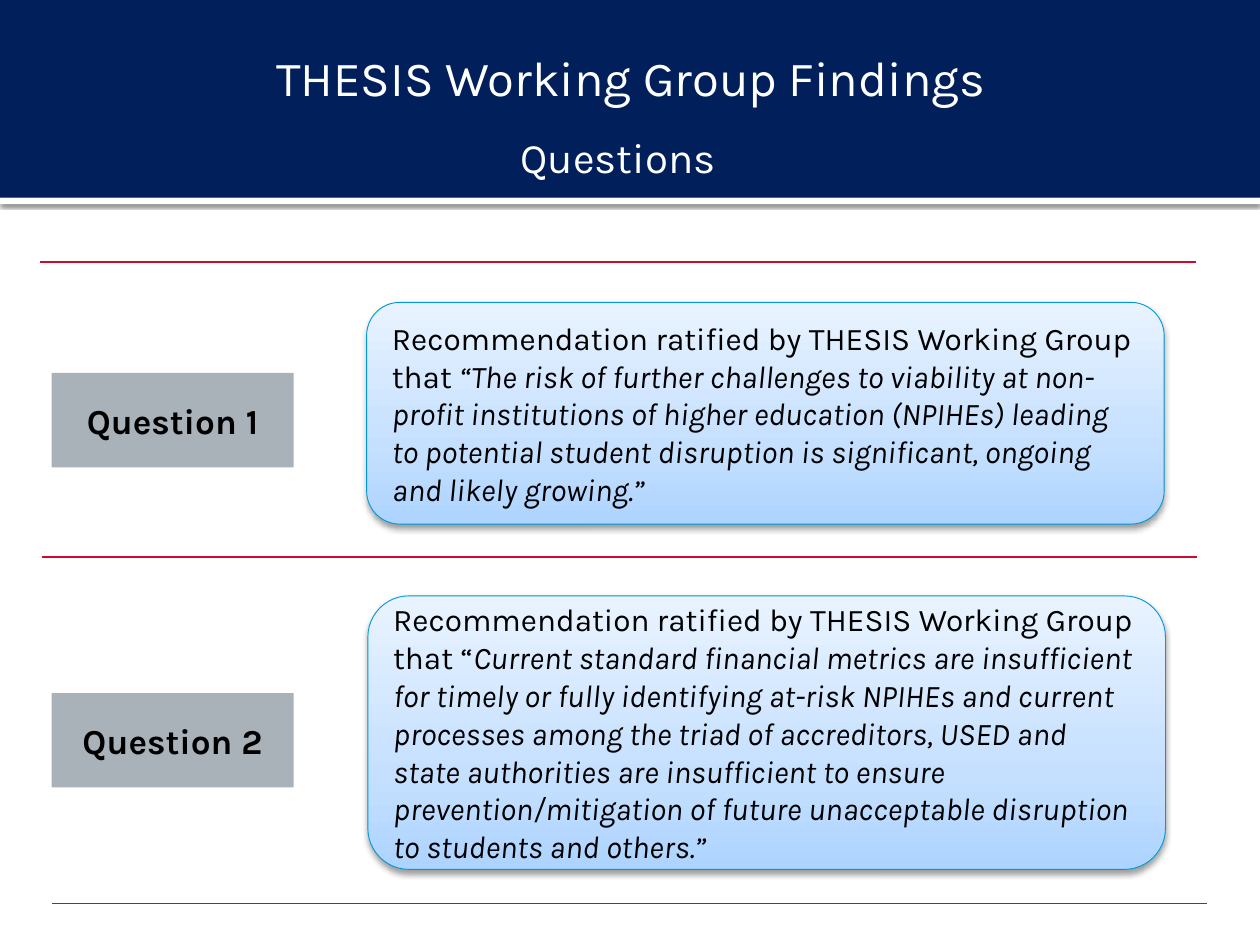
from copy import deepcopy

from lxml import etree
from pptx import Presentation
from pptx.dml.color import RGBColor
from pptx.enum import shapes, text
from pptx.oxml.ns import qn
from pptx.util import Inches, Pt

FONT = "Karla"
WHITE = RGBColor(0xFF, 0xFF, 0xFF)
BLACK = RGBColor(0x00, 0x00, 0x00)
NAVY = RGBColor(0x00, 0x1F, 0x5B)
GREY = RGBColor(0xA9, 0xB1, 0xB9)
RED = RGBColor(0xCF, 0x0A, 0x2C)
CARD_EDGE = RGBColor(0x00, 0x98, 0xD9)
CARD_STOPS = [
    (0, RGBColor(0xAD, 0xD4, 0xFF)),
    (0.35, RGBColor(0xC5, 0xE0, 0xFF)),
    (1, RGBColor(0xE9, 0xF3, 0xFF)),
]
CORNER = 0.15  # card corner radius as a share of the card height
LEAD = "Recommendation ratified by THESIS Working Group that "

# label top, card left, top and height, label, lead-in, quotation
QUESTIONS = [
    (2.96, 2.91, 2.4, 1.76, "Question 1", LEAD,
     "“The risk of further challenges to viability at non-profit institutions "
     "of higher education (NPIHEs) leading to potential student disruption is "
     "significant, ongoing and likely growing.”"),
    (5.5, 2.92, 4.73, 2.17, "Question 2", LEAD + "“",
     "Current standard financial metrics are insufficient for timely or fully "
     "identifying at-risk NPIHEs and current processes among the triad of "
     "accreditors, USED and state authorities are insufficient to ensure "
     "prevention/mitigation of future unacceptable disruption to students "
     "and others.”"),
]
RULES = [(0.32, 2.08), (0.33, 4.42), (0.41, 7.17)]  # left, top
RULE_WIDTH = 9.17


def set_font(paragraph, size, color, bold=False):
    font = paragraph.font
    font.name, font.size, font.bold = FONT, Pt(size), bold
    font.color.rgb = color


def add_block(slide, kind, left, top, width, height, color=None):
    block = slide.shapes.add_shape(
        kind, Inches(left), Inches(top), Inches(width), Inches(height))
    block.shadow.inherit = False
    block.line.fill.background()
    if color is not None:
        block.fill.solid()
        block.fill.fore_color.rgb = color
    return block


def add_drop_shadow(block, opacity, blur, distance):
    effects = block._element.spPr.find(qn("a:effectLst"))
    shadow = etree.SubElement(
        effects, qn("a:outerShdw"), blurRad=str(Pt(blur)), dist=str(Pt(distance)),
        dir="5400000", algn="t", rotWithShape="0")
    color = etree.SubElement(shadow, qn("a:srgbClr"), val="000000")
    etree.SubElement(color, qn("a:alpha"), val=str(opacity * 1000))


def add_heading(slide, words, left, top, width, height, size):
    heading = slide.shapes.add_textbox(
        Inches(left), Inches(top), Inches(width), Inches(height))
    frame = heading.text_frame
    frame.word_wrap = True
    frame.vertical_anchor = text.MSO_ANCHOR.MIDDLE
    paragraph = frame.paragraphs[0]
    paragraph.text = words
    paragraph.alignment = text.PP_ALIGN.CENTER
    set_font(paragraph, size, WHITE)


def add_header(slide, width, height):
    rectangle = shapes.MSO_SHAPE.RECTANGLE
    strip = add_block(slide, rectangle, 0, height, width, 0.05, WHITE)
    add_drop_shadow(strip, 60, 2.5, 0.8)
    add_block(slide, rectangle, 0, 0, width, height, NAVY)
    add_heading(slide, "THESIS Working Group Findings", 0.13, 0.34, 9.75, 0.54, 28)
    add_heading(slide, "Questions", 1.99, 0.99, 5.83, 0.5, 24)


def add_label(slide, words, left, top, width, height):
    label = add_block(
        slide, shapes.MSO_SHAPE.RECTANGLE, left, top, width, height, GREY)
    frame = label.text_frame
    frame.vertical_anchor = text.MSO_ANCHOR.MIDDLE
    paragraph = frame.paragraphs[0]
    paragraph.text = words
    paragraph.alignment = text.PP_ALIGN.CENTER
    set_font(paragraph, 20, BLACK, bold=True)


def fill_gradient(card):
    card.fill.gradient()
    card.fill.gradient_angle = 90
    stop_list = card.fill._fill._gradFill.gsLst
    stop_list.insert(1, deepcopy(stop_list[0]))
    for stop, (position, color) in zip(card.fill.gradient_stops, CARD_STOPS):
        stop.position = position
        stop.color.rgb = color


def add_card(slide, lead, quotation, left, top, width, height):
    card = add_block(
        slide, shapes.MSO_SHAPE.ROUNDED_RECTANGLE, left, top, width, height)
    card.adjustments[0] = CORNER
    fill_gradient(card)
    card.line.color.rgb = CARD_EDGE
    card.line.width = Pt(0.5)
    add_drop_shadow(card, 38, 3.5, 2)

    # The rounded corners already push the text in by 0.29 of their radius
    frame = card.text_frame
    inset = Inches(0.2 - 0.29 * CORNER * height)
    frame.margin_left = frame.margin_right = inset
    frame.margin_top = frame.margin_bottom = inset
    frame.word_wrap = True
    frame.vertical_anchor = text.MSO_ANCHOR.MIDDLE
    paragraph = frame.paragraphs[0]
    paragraph.alignment = text.PP_ALIGN.LEFT
    set_font(paragraph, 18, BLACK)
    paragraph.add_run().text = lead
    quote = paragraph.add_run()
    quote.text = quotation
    quote.font.italic = True


def add_rule(slide, left, top, width):
    rule = slide.shapes.add_connector(
        shapes.MSO_CONNECTOR.STRAIGHT,
        Inches(left), Inches(top), Inches(left + width), Inches(top))
    rule.line.color.rgb = RED
    rule.line.width = Pt(0.75)
    etree.SubElement(rule._element.spPr, qn("a:effectLst"))


def main():
    deck = Presentation()
    deck.slide_width, deck.slide_height = Inches(10), Inches(7.5)
    slide = deck.slides.add_slide(deck.slide_layouts[6])

    add_header(slide, 10, 1.57)
    for left, top in RULES:
        add_rule(slide, left, top, RULE_WIDTH)
    for label_top, left, top, height, label, lead, quotation in QUESTIONS:
        add_label(slide, label, 0.41, label_top, 1.92, 0.75)
        add_card(slide, lead, quotation, left, top, 6.33, height)

    deck.save("out.pptx")


if __name__ == "__main__":
    main()
